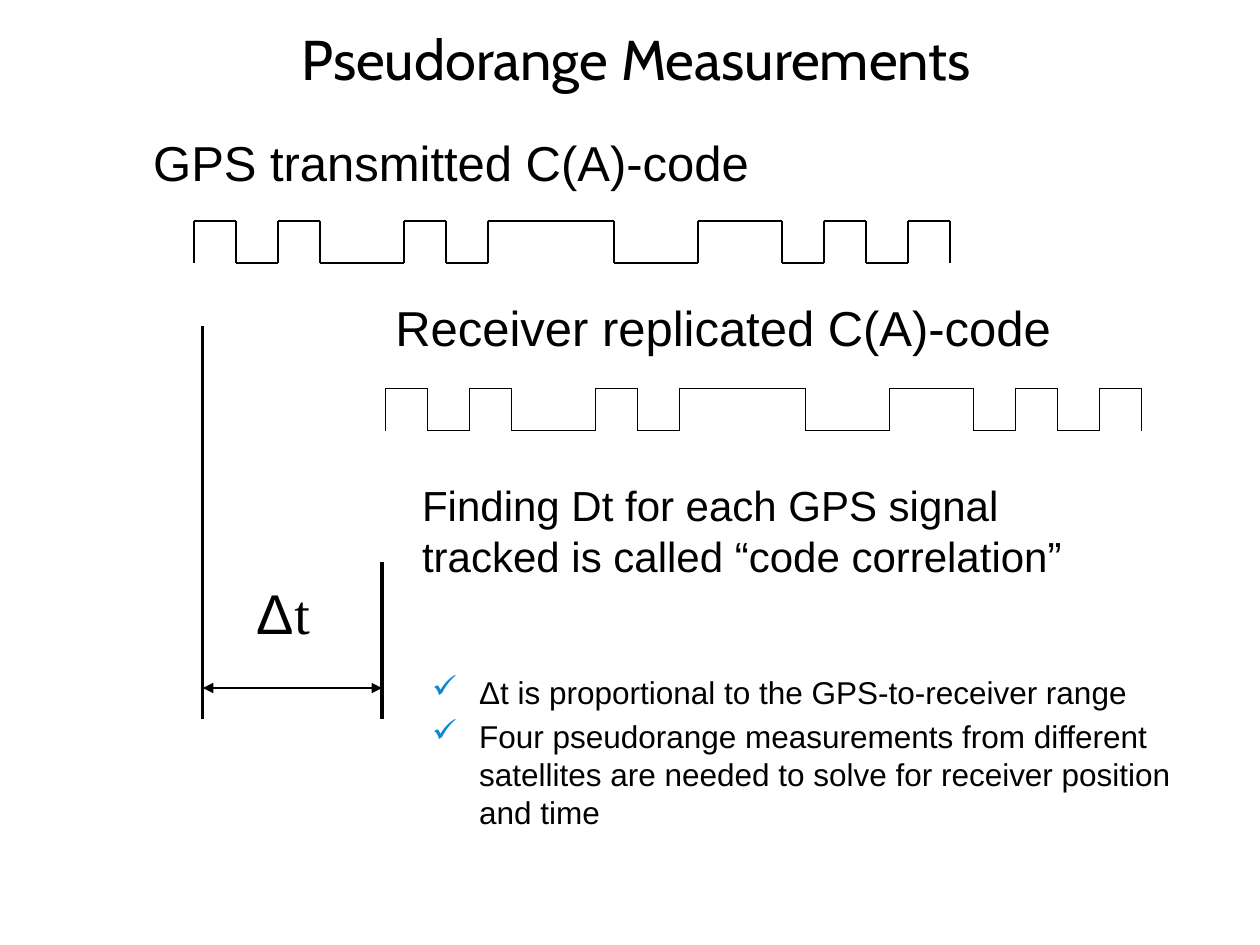
"""Build the slide on pseudorange measurements from GPS code signals."""
from dataclasses import dataclass

from lxml.etree import SubElement
from pptx import Presentation
from pptx.dml.color import RGBColor
from pptx.enum.shapes import MSO_CONNECTOR as Conn
from pptx.enum.text import MSO_ANCHOR as Anchor, PP_ALIGN as Align
from pptx.oxml.ns import qn
from pptx.util import Cm, Pt

COLORS = {"ink": "000000", "check": "0B87D6"}
BITS = "101001011100110101"
WAVE_WIDTH = 15.24
WAVE_HEIGHT = 0.85


@dataclass
class Line:
    """A straight line in centimetres, optionally with arrowheads."""
    x1: float
    y1: float
    x2: float
    y2: float
    weight: float = 1
    arrows: bool = False


@dataclass
class Label:
    """A text box in centimetres."""
    text: str
    left: float
    top: float
    width: float
    height: float
    size: float
    font: str = "Arial"
    align: Align = Align.LEFT
    anchor: Anchor = Anchor.TOP


WAVES = [(3.91, 4.45), (7.77, 7.83)]
DELAY_LINES = [
    Line(4.09, 6.58, 4.09, 14.5, 1.75),
    Line(7.7, 11.33, 7.7, 14.5, 1.75),
    Line(4.09, 13.87, 7.7, 13.87, 1.5, True),
]
TITLE = Label("Pseudorange Measurements", 2.11, 0.43, 21.44, 1.47, 32,
              "Cabin", Align.CENTER, Anchor.MIDDLE)
CAPTIONS = [
    Label("GPS transmitted C(A)-code", 2.84, 2.54, 12.9, 1.45, 28),
    Label("Receiver replicated C(A)-code", 7.72, 5.87, 14.43, 1.45, 28),
    Label("Finding Dt for each GPS signal tracked is called “code correlation”",
          8.26, 9.55, 15.04, 2.31, 24),
]
DELAY = Label("Δ", 4.93, 11.53, 1.91, 1.6, 32)
NOTES = Label(
    "Δt is proportional to the GPS-to-receiver range\n"
    "Four pseudorange measurements from different satellites are needed "
    "to solve for receiver position and time",
    8.46, 13.44, 15.54, 2.62, 18)


def color(name: str) -> RGBColor:
    """Look up a named colour."""
    return RGBColor.from_string(COLORS[name])


def draw_line(s, line: Line) -> None:
    """Draw one line without a shadow."""
    c = s.shapes.add_connector(Conn.STRAIGHT, Cm(line.x1), Cm(line.y1),
                               Cm(line.x2), Cm(line.y2))
    c.line.color.rgb = color("ink")
    c.line.width = Pt(line.weight)
    if line.arrows:
        ln = c.line._get_or_add_ln()
        for end in ("a:headEnd", "a:tailEnd"):
            SubElement(ln, qn(end), type="triangle")
    SubElement(c._element.spPr, qn("a:effectLst"))


def draw_wave(s, left: float, top: float) -> None:
    """Draw the code as a square wave, with an edge at each change of bit."""
    step = WAVE_WIDTH / len(BITS)
    bottom = top + WAVE_HEIGHT
    for i, (before, bit) in enumerate(zip("0" + BITS, BITS + "0")):
        x = left + i * step
        if before != bit:
            draw_line(s, Line(x, bottom, x, top))
        if i < len(BITS):
            y = top if bit == "1" else bottom
            draw_line(s, Line(x, y, x + step, y))


def style_run(r, size: float, font: str) -> None:
    """Set the font of a run."""
    r.font.size = Pt(size)
    r.font.name = font
    r.font.color.rgb = color("ink")


def draw_label(s, label: Label):
    """Draw a text box and return its text frame."""
    box = s.shapes.add_textbox(Cm(label.left), Cm(label.top),
                               Cm(label.width), Cm(label.height))
    tf = box.text_frame
    tf.word_wrap = True
    tf.vertical_anchor = label.anchor
    tf.text = label.text
    for p in tf.paragraphs:
        p.alignment = label.align
        for r in p.runs:
            style_run(r, label.size, label.font)
    return tf


def add_checks(tf) -> None:
    """Give each paragraph a check mark and a hanging indent."""
    for i, p in enumerate(tf.paragraphs):
        if i:
            p.space_before = Pt(3.6)
        pPr = p._p.get_or_add_pPr()
        pPr.set("marL", str(Cm(0.95)))
        pPr.set("indent", str(Cm(-0.95)))
        clr = SubElement(pPr, qn("a:buClr"))
        SubElement(clr, qn("a:srgbClr"), val=COLORS["check"])
        SubElement(pPr, qn("a:buChar"), char="✓")


def main() -> None:
    """Build and save the slide."""
    prs = Presentation()
    prs.slide_width, prs.slide_height = Cm(25.4), Cm(19.05)
    s = prs.slides.add_slide(prs.slide_layouts[6])
    draw_label(s, TITLE)
    for left, top in WAVES:
        draw_wave(s, left, top)
    for line in DELAY_LINES:
        draw_line(s, line)
    r = draw_label(s, DELAY).paragraphs[0].add_run()
    r.text = "t"
    style_run(r, DELAY.size, "Times New Roman")
    for caption in CAPTIONS:
        draw_label(s, caption)
    add_checks(draw_label(s, NOTES))
    prs.save("out.pptx")


if __name__ == "__main__":
    main()
